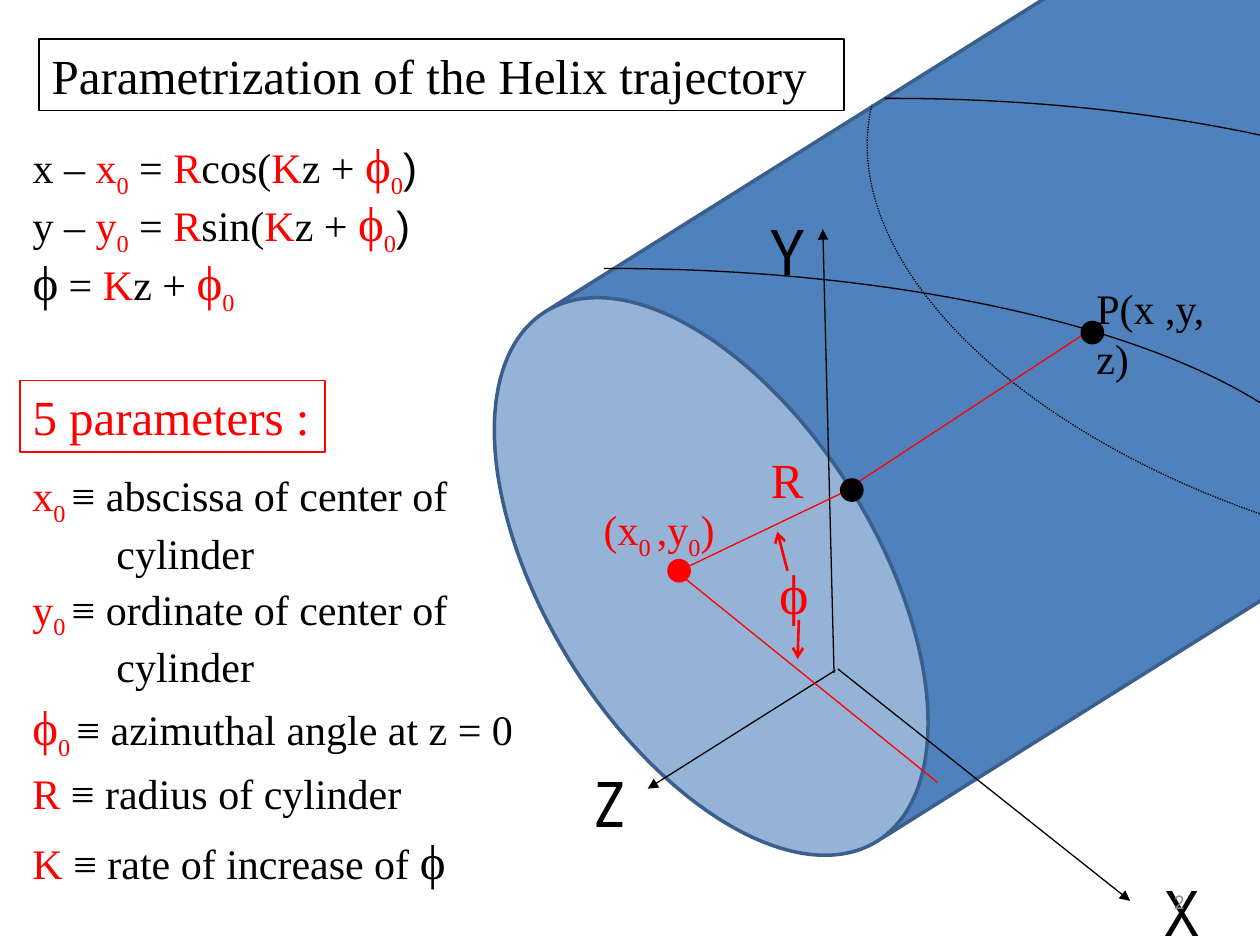
from lxml.etree import SubElement
from pptx import Presentation
from pptx.dml.color import RGBColor
from pptx.enum.dml import MSO_LINE
from pptx.enum.shapes import MSO_CONNECTOR, MSO_SHAPE
from pptx.enum.text import MSO_ANCHOR, MSO_AUTO_SIZE, PP_ALIGN
from pptx.oxml.ns import qn
from pptx.util import Pt

BLACK, RED, GREY = (RGBColor.from_string(code) for code in ("000000", "FF0000", "8C8C8C"))
BLUE, EDGE = (RGBColor.from_string(code) for code in ("4F81BD", "3A5F8C"))
SERIF = "Times New Roman"
THEME = {
    "ink": (SERIF, 24, BLACK),
    "red": (SERIF, 24, RED),
    "sub": (SERIF, 24, RED),
    "heading": (SERIF, 28, BLACK),
    "red heading": (SERIF, 28, RED),
    "angle": (SERIF, 32, RED),
    "bracket": ("Arial", 24, BLACK),
    "axis": ("Noto Sans Mono", 36, BLACK),
    "number": ("Calibri", 12, GREY),
}


def write_runs(paragraph, runs):
    for text, style in runs:
        run = paragraph.add_run()
        run.text = text
        name, size, color = THEME[style]
        for attribute, value in {"name": name, "size": Pt(size)}.items():
            setattr(run.font, attribute, value)
        run.font.color.rgb = color
        if style == "sub":
            run.font._element.set("baseline", "-25000")


def add_text(left, top, width, height, *lines):
    box = slide.shapes.add_textbox(Pt(left), Pt(top), Pt(width), Pt(height))
    frame = box.text_frame
    for attribute, value in {"word_wrap": False, "auto_size": MSO_AUTO_SIZE.SHAPE_TO_FIT_TEXT}.items():
        setattr(frame, attribute, value)
    for index, runs in enumerate(lines):
        paragraph = frame.add_paragraph() if index else frame.paragraphs[0]
        if index:
            paragraph._p.get_or_add_pPr().set("marL", str(Pt(48)))
        write_runs(paragraph, runs)
    return box


presentation = Presentation()
presentation.slide_width, presentation.slide_height = Pt(720), Pt(540)
slide = presentation.slides.add_slide(presentation.slide_layouts[5])

title = slide.shapes.title
bounds = {"left": Pt(22.3), "top": Pt(22.3), "width": Pt(460), "height": Pt(41)}
for attribute, value in bounds.items():
    setattr(title, attribute, value)
frame_format = {"word_wrap": True, "auto_size": MSO_AUTO_SIZE.NONE, "vertical_anchor": MSO_ANCHOR.TOP}
for attribute, value in frame_format.items():
    setattr(title.text_frame, attribute, value)
title.line.color.rgb = BLACK
title.line.width = Pt(0.75)
title_paragraph = title.text_frame.paragraphs[0]
title_paragraph.alignment = PP_ALIGN.LEFT
write_runs(title_paragraph, [("Parametrization of the Helix trajectory", "heading")])

cylinder = slide.shapes.add_shape(MSO_SHAPE.CAN, Pt(446.4), Pt(-159.8), Pt(357.1), Pt(704.2))
cylinder.shadow.inherit = False
cylinder.rotation = 237.9
cylinder.adjustments[0] = 0.527
cylinder.fill.solid()
cylinder.fill.fore_color.rgb = BLUE
cylinder.line.color.rgb = EDGE
cylinder.line.width = Pt(2)

for left, top, width, height, rotation, dash in (
    (92.9, 56.2, 832.3, 303.8, 0, None),
    (-79.2, 153.4, 855.4, 303.8, 0, None),
    (488.9, -39.6, 659.5, 355, 193.7, MSO_LINE.ROUND_DOT),
):
    helix = slide.shapes.add_shape(MSO_SHAPE.ARC, Pt(left), Pt(top), Pt(width), Pt(height))
    helix.shadow.inherit = False
    helix.rotation = rotation
    helix.adjustments[0] = 161.225
    helix.adjustments[1] = 0
    helix.fill.background()
    helix.line.color.rgb = BLACK
    helix.line.width = Pt(0.75)
    helix.line.dash_style = dash

for start_x, start_y, end_x, end_y, color, width, arrow in (
    (476.6, 384.5, 470.2, 131, BLACK, 0.75, "triangle"),
    (477.4, 383, 370.1, 450.7, BLACK, 0.75, "triangle"),
    (478.8, 382.3, 645.8, 514.8, BLACK, 0.75, "triangle"),
    (389.5, 329, 535.7, 447.1, RED, 0.75, None),
    (388.1, 326.2, 486, 279.4, RED, 0.75, None),
    (486.7, 277.9, 618.5, 191.5, RED, 0.75, None),
    (450, 326.2, 444.2, 303.8, RED, 1.5, "arrow"),
    (456.5, 354.2, 455.8, 376.6, RED, 1.5, "arrow"),
):
    connector = slide.shapes.add_connector(
        MSO_CONNECTOR.STRAIGHT, Pt(start_x), Pt(start_y), Pt(end_x), Pt(end_y)
    )
    connector.line.color.rgb = color
    connector.line.width = Pt(width)
    if arrow:
        SubElement(connector.line._get_or_add_ln(), qn("a:tailEnd"), type=arrow)
    SubElement(connector._element.spPr, qn("a:effectLst"))

for letter, left, top in (("Z", 330.5, 433.4), ("X", 657.4, 495.4), ("Y", 432, 118.1)):
    add_text(left, top, 36, 51, [(letter, "axis")])

add_text(619.4, 157.7, 100, 36, [("P(x ,y, z)", "ink")])
add_text(438.5, 315.4, 34, 46, [("ϕ", "angle")])
add_text(433.4, 253.4, 33, 41, [("R", "red heading")])
add_text(337.9, 284.4, 81, 36, [("(x", "red"), ("0 ", "sub"), (",y", "red"), ("0", "sub"), (")", "red")])

phase = [("K", "red"), ("z + ", "ink"), ("ϕ", "red heading"), ("0", "sub")]
for top, name, function in ((73.4, "x", "cos("), (106.6, "y", "sin(")):
    equation = [(f"{name} – ", "ink"), (name, "red"), ("0", "sub"), (" = ", "ink"), ("R", "red")]
    add_text(11.5, top, 240, 41, equation + [(function, "ink")] + phase + [(")", "bracket")])
add_text(11.5, 140.4, 137, 41, [("ϕ", "heading"), (" = ", "ink")] + phase)

parameters = add_text(11.5, 217.4, 174.2, 41, [("5 parameters :", "red heading")])
parameters.line.color.rgb = RED
parameters.line.width = Pt(0.75)

for top, name, meaning in ((265, "x", "abscissa"), (329.8, "y", "ordinate")):
    definition = [(name, "red"), ("0 ", "sub"), (f"≡ {meaning} of center of", "ink")]
    add_text(11.5, top, 257, 65.5, definition, [("cylinder", "ink")])
add_text(11.5, 394.6, 297, 41, [("ϕ", "red heading"), ("0 ", "sub"), ("≡ azimuthal angle at z = 0", "ink")])
add_text(11.5, 434.9, 227, 36, [("R", "red"), (" ≡ radius of cylinder", "ink")])
add_text(11.5, 470.9, 255, 41, [("K", "red"), (" ≡ rate of increase of ", "ink"), ("ϕ", "heading")])

for left, top, color in ((382.3, 320.4, RED), (618.5, 184.3, BLACK), (481, 274.3, BLACK)):
    point = slide.shapes.add_shape(MSO_SHAPE.OVAL, Pt(left), Pt(top), Pt(11.5), Pt(11.5))
    point.shadow.inherit = False
    point.fill.solid()
    point.fill.fore_color.rgb = color
    point.line.color.rgb = color
    point.line.width = Pt(2)

number = add_text(516.2, 500.4, 167.8, 28.8, [("2", "number")])
number_format = {"word_wrap": True, "auto_size": MSO_AUTO_SIZE.NONE, "vertical_anchor": MSO_ANCHOR.MIDDLE}
for attribute, value in number_format.items():
    setattr(number.text_frame, attribute, value)
number.text_frame.paragraphs[0].alignment = PP_ALIGN.RIGHT

presentation.save("out.pptx")
